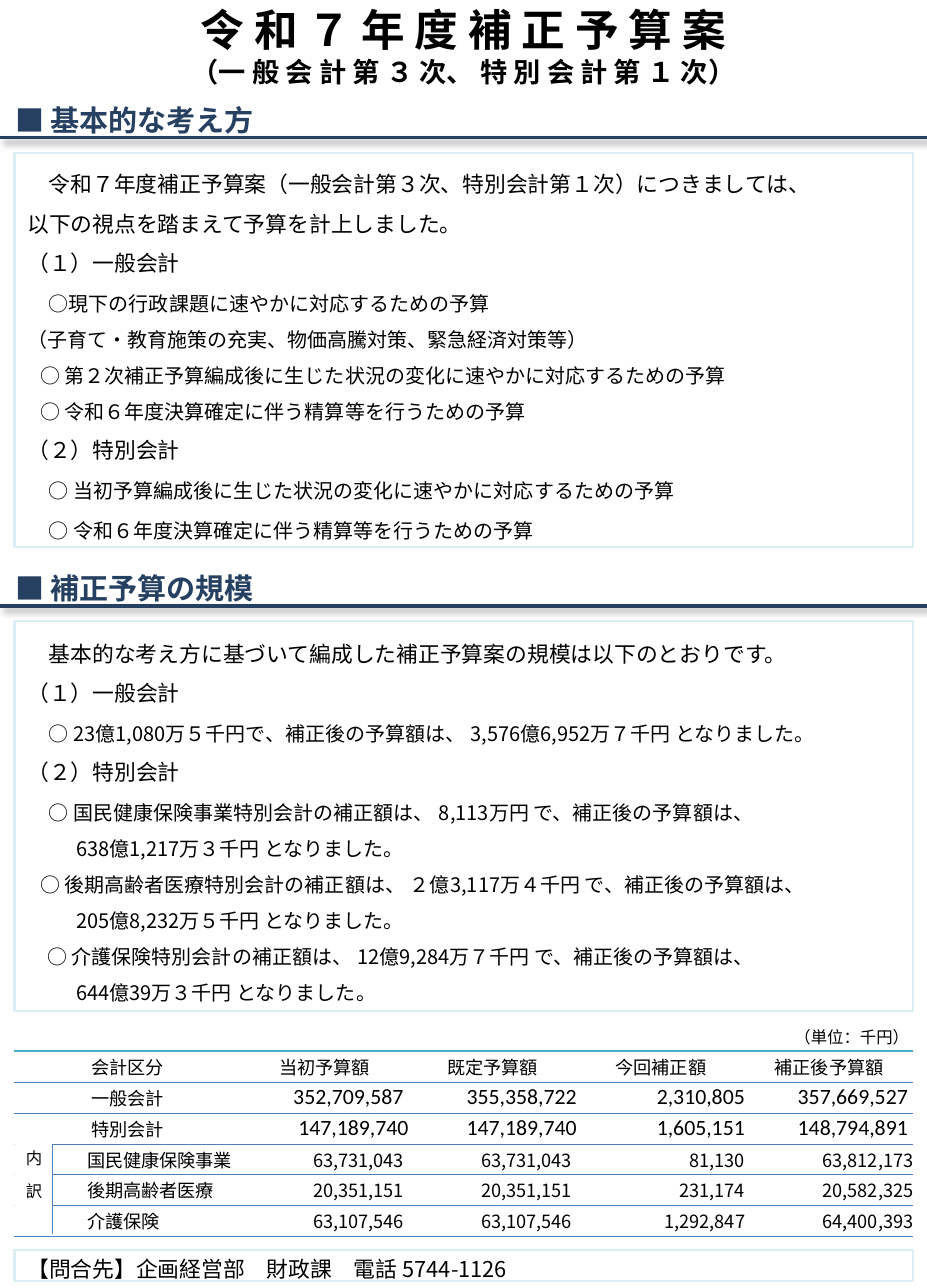
import lxml.etree
import pptx
import pptx.dml.color
import pptx.enum.shapes
import pptx.enum.text
import pptx.oxml
import pptx.oxml.ns
import pptx.util

Cm, Pt = pptx.util.Cm, pptx.util.Pt
ALIGN = pptx.enum.text.PP_ALIGN
SHAPE = pptx.enum.shapes.MSO_SHAPE
qn = pptx.oxml.ns.qn


class Theme:
    font, digit = "Noto Sans CJK JP", "Calibri"
    black, white, navy = "000000", "FFFFFF", "254061"
    pale, blue, teal = "DBEEF4", "4F81BD", "4BACC6"
    title, sub, head, body, item, cell, small = 24, 15, 16, 12, 11, 10, 9


TITLE = ("令 和 ７ 年 度 補 正 予 算 案", "（一 般 会 計 第 ３ 次、 特 別 会 計 第 １ 次）")

# size, left indent in cm, points above
STYLES = {
    "lead": (Theme.body, 0.42, 0),
    "body": (Theme.body, 0, 0),
    "item": (Theme.item, 0.42, 2),
    "tight": (Theme.item, 0.39, 0),
    "point": (Theme.item, 0.25, 0),
    "note": (Theme.item, 0, 0),
    "sum": (Theme.item, 0.95, 0),
}

# heading, top, box height, lines
PARTS = [
    ("■ 基本的な考え方", 1.83, 7.65, [
        ("lead", "令和７年度補正予算案（一般会計第３次、特別会計第１次）につきましては、"),
        ("body", "以下の視点を踏まえて予算を計上しました。"),
        ("body", "（１）一般会計"),
        ("item", "○現下の行政課題に速やかに対応するための予算"),
        ("note", "（子育て・教育施策の充実、物価高騰対策、緊急経済対策等）"),
        ("point", "○ 第２次補正予算編成後に生じた状況の変化に速やかに対応するための予算"),
        ("point", "○ 令和６年度決算確定に伴う精算等を行うための予算"),
        ("body", "（２）特別会計"),
        ("item", "○ 当初予算編成後に生じた状況の変化に速やかに対応するための予算"),
        ("item", "○ 令和６年度決算確定に伴う精算等を行うための予算"),
    ]),
    ("■ 補正予算の規模", 10.92, 7.57, [
        ("lead", "基本的な考え方に基づいて編成した補正予算案の規模は以下のとおりです。"),
        ("body", "（１）一般会計"),
        ("item", "○ 23億1,080万５千円で、補正後の予算額は、 3,576億6,952万７千円 となりました。"),
        ("body", "（２）特別会計"),
        ("item", "○ 国民健康保険事業特別会計の補正額は、 8,113万円 で、補正後の予算額は、"),
        ("sum", "638億1,217万３千円 となりました。"),
        ("point", "○ 後期高齢者医療特別会計の補正額は、 ２億3,117万４千円 で、補正後の予算額は、"),
        ("sum", "205億8,232万５千円 となりました。"),
        ("tight", "○ 介護保険特別会計の補正額は、 12億9,284万７千円 で、補正後の予算額は、"),
        ("sum", "644億39万３千円 となりました。"),
    ]),
]

UNIT = "（単位：千円）"
ROWS = [
    ("会計区分", "当初予算額", "既定予算額", "今回補正額", "補正後予算額"),
    ("一般会計", "352,709,587", "355,358,722", "2,310,805", "357,669,527"),
    ("特別会計", "147,189,740", "147,189,740", "1,605,151", "148,794,891"),
    ("国民健康保険事業", "63,731,043", "63,731,043", "81,130", "63,812,173"),
    ("後期高齢者医療", "20,351,151", "20,351,151", "231,174", "20,582,325"),
    ("介護保険", "63,107,546", "63,107,546", "1,292,847", "64,400,393"),
]
INSET = {(1, 1), (1, 4), (2, 4), (3, 1), (3, 2), (4, 1), (4, 2), (5, 1), (5, 2)}
SPLIT = "内　訳"
DESK = "【問合先】企画経営部　財政課　電話 5744-1126"

WIDE, HIGH = 18, 25
LEFT, SPAN = 0.28, 17.45
TOP, ROW, FIRST = 20.4, 0.6, 4.39
SIDE = 0.74


def color(code):
    return pptx.dml.color.RGBColor.from_string(code)


def write(para, text, size, tint=Theme.black, bold=False, face=Theme.font):
    run = para.add_run()
    run.text = text
    font = run.font
    font.size, font.bold, font.name = Pt(size), bold, face
    font.color.rgb = color(tint)
    east = lxml.etree.SubElement(run._r.get_or_add_rPr(), qn("a:ea"))
    east.set("typeface", face)


def setup(frame, left=0.25, top=0.13, right=0.25, base=0.13):
    """Set wrapping, anchor and insets; return the first paragraph."""
    frame.word_wrap = True
    frame.auto_size = pptx.enum.text.MSO_AUTO_SIZE.NONE
    frame.vertical_anchor = pptx.enum.text.MSO_ANCHOR.MIDDLE
    frame.margin_left, frame.margin_top = Cm(left), Cm(top)
    frame.margin_right, frame.margin_bottom = Cm(right), Cm(base)
    return frame.paragraphs[0]


def label(slide, x, y, w, h):
    return slide.shapes.add_textbox(Cm(x), Cm(y), Cm(w), Cm(h)).text_frame


def panel(slide, x, y, w, h, edge=None):
    box = slide.shapes.add_shape(SHAPE.RECTANGLE, Cm(x), Cm(y), Cm(w), Cm(h))
    box.shadow.inherit = False
    box.fill.solid()
    box.fill.fore_color.rgb = color(Theme.white)
    if edge:
        box.line.color.rgb = color(edge)
        box.line.width = Pt(1.25)
    else:
        box.line.fill.background()
    return box.text_frame


def rule(slide, x, y, end_x, end_y, tint, width):
    line = slide.shapes.add_connector(
        pptx.enum.shapes.MSO_CONNECTOR.STRAIGHT, Cm(x), Cm(y), Cm(end_x), Cm(end_y))
    line.line.color.rgb = color(tint)
    line.line.width = Pt(width)
    return lxml.etree.SubElement(line._element.spPr, qn("a:effectLst"))


def shade(effect):
    cast = lxml.etree.SubElement(effect, qn("a:outerShdw"), blurRad=str(Pt(4)),
                                 dist=str(Pt(3)), dir="2700000", algn="tl", rotWithShape="0")
    tint = lxml.etree.SubElement(cast, qn("a:srgbClr"), val=Theme.black)
    lxml.etree.SubElement(tint, qn("a:alpha"), val="40000")


def border(cell, top, base):
    """Draw the top and bottom edges, each a colour and a width in points."""
    props = cell._tc.get_or_add_tcPr()
    for spot, (tag, (tint, width)) in enumerate((("a:lnT", top), ("a:lnB", base))):
        edge = lxml.etree.Element(qn(tag), w=str(Pt(width)))
        fill = lxml.etree.SubElement(edge, qn("a:solidFill"))
        lxml.etree.SubElement(fill, qn("a:srgbClr"), val=tint)
        props.insert(spot, edge)


def section(slide, head, top, height, lines):
    para = setup(label(slide, 0, top, WIDE, 1), left=0.3, right=0.1)
    write(para, head, Theme.head, Theme.navy, True)
    shade(rule(slide, 0, top + 0.84, WIDE, top + 0.84, Theme.navy, 2))
    frame = panel(slide, LEFT, top + 1.14, SPAN, height, Theme.pale)
    para = setup(frame)
    for count, (style, text) in enumerate(lines):
        if count:
            para = frame.add_paragraph()
        size, indent, above = STYLES[style]
        para.alignment = ALIGN.JUSTIFY
        para.line_spacing = 1.5
        para.space_before = Pt(above)
        para._p.get_or_add_pPr().set("marL", str(Cm(indent)))
        write(para, text, size)


def budget(slide):
    frame = slide.shapes.add_table(len(ROWS), len(ROWS[0]), Cm(LEFT), Cm(TOP),
                                   Cm(SPAN), Cm(ROW * len(ROWS)))
    table = frame.table
    table.first_row = table.horz_banding = False
    style = table._tbl.tblPr.find(qn("a:tableStyleId"))
    style.text = "{2D5ABB26-0587-4C30-8999-92F81FD0307C}"
    for col, column in enumerate(table.columns):
        column.width = Cm((SPAN - FIRST) / 4 if col else FIRST)
    thin = (Theme.blue, 0.25)
    for row, texts in enumerate(ROWS):
        table.rows[row].height = Cm(ROW)
        for col, text in enumerate(texts):
            cell = table.cell(row, col)
            cell.fill.background()
            border(cell, thin if row else (Theme.teal, 1), thin)
            cell.vertical_anchor = pptx.enum.text.MSO_ANCHOR.MIDDLE
            detail = row > 2
            cell.margin_left = Cm(1.41 if detail and not col else 0)
            cell.margin_right = Cm(0.1 if (row, col) in INSET else 0)
            cell.margin_top = cell.margin_bottom = 0
            para = cell.text_frame.paragraphs[0]
            if row and col:
                para.alignment = ALIGN.RIGHT
            else:
                para.alignment = ALIGN.LEFT if detail else ALIGN.CENTER
            total = row in (1, 2) and col
            write(para, text, Theme.body if total else Theme.cell,
                  face=Theme.digit if total else Theme.font)


def main():
    deck = pptx.Presentation()
    deck.slide_width, deck.slide_height = Cm(WIDE), Cm(HIGH)
    slide = deck.slides.add_slide(deck.slide_layouts[5])

    title = slide.shapes.title
    title.left, title.top, title.width, title.height = Cm(0), Cm(-0.46), Cm(WIDE), Cm(2.7)
    para = setup(title.text_frame, 0.28, 0.15, 0.28, 0.15)
    para.alignment = ALIGN.CENTER
    write(para, TITLE[0], Theme.title, bold=True)
    para.add_line_break()
    write(para, TITLE[1], Theme.sub, bold=True)

    for part in PARTS:
        section(slide, *part)
    budget(slide)

    para = setup(label(slide, 14.7, 19.84, 3.2, 0.58))
    para.alignment = ALIGN.RIGHT
    write(para, UNIT, Theme.small)

    para = setup(panel(slide, LEFT, 24.26, SPAN, 0.61, Theme.pale), base=0)
    para.alignment = ALIGN.JUSTIFY
    write(para, DESK, Theme.body)

    top, height = TOP + 3 * ROW, 3 * ROW - 0.05
    frame = panel(slide, LEFT, top, SIDE, height)
    para = setup(frame)
    para.alignment = ALIGN.CENTER
    frame._txBody.bodyPr.set("vert", "eaVert")
    write(para, SPLIT, Theme.small)
    rule(slide, LEFT + SIDE, top, LEFT + SIDE, top + height, Theme.blue, 0.25)

    deck.save("out.pptx")


if __name__ == "__main__":
    main()
